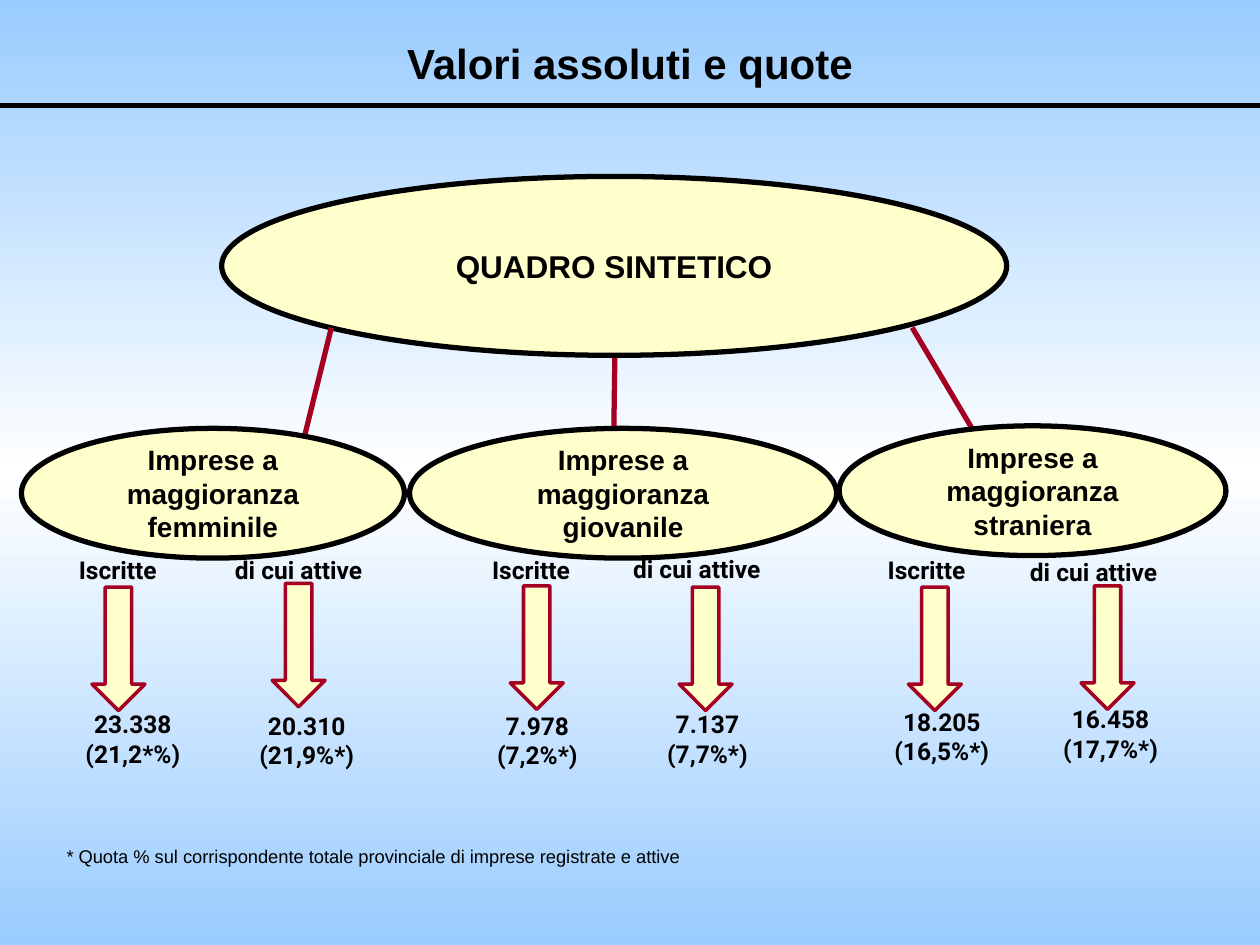
from copy import deepcopy
from pptx import Presentation, util as u
from pptx.dml.color import RGBColor
from pptx.enum import shapes, text
from pptx.oxml import ns
from lxml import etree

SKY = RGBColor(0x99, 0xCC, 0xFF)
WHITE = RGBColor(0xFF, 0xFF, 0xFF)
CREAM = RGBColor(0xFF, 0xFF, 0xCC)
RED = RGBColor(0xA5, 0x00, 0x21)
BLACK = RGBColor(0, 0, 0)
WIDE, HIGH = 10, 7.5

GROUPS = [
    ("femminile", (0.17, 3.4, 3.04, 1.03), [
        ("Iscritte", (0.29, 4.36), (0.73, 4.66), (0.43, 5.58, 1.25), "23.338", "(21,2*%)"),
        ("di cui attive", (1.68, 4.36), (2.16, 4.63), (1.81, 5.59, 1.25), "20.310", "(21,9%*)")]),
    ("giovanile", (3.25, 3.4, 3.39, 1.03), [
        ("Iscritte", (3.57, 4.36), (4.05, 4.65), (3.66, 5.59, 1.21), "7.978", "(7,2%*)"),
        ("di cui attive", (4.84, 4.35), (5.39, 4.66), (5.01, 5.58, 1.21), "7.137", "(7,7%*)")]),
    ("straniera", (6.66, 3.38, 3.07, 1.03), [
        ("Iscritte", (6.71, 4.36), (7.21, 4.66), (6.87, 5.56, 1.21), "18.205", "(16,5%*)"),
        ("di cui attive", (7.99, 4.37), (8.58, 4.65), (8.21, 5.54, 1.21), "16.458", "(17,7%*)")]),
]
LABEL = {"Iscritte": 1.29, "di cui attive": 1.38}


def inch(*vals):
    return [u.Inches(v) for v in vals]


def paint(slide):
    fill = slide.background.fill
    fill.gradient()
    fill.gradient_angle = 270
    stops = slide.element.find(".//" + ns.qn("a:gsLst"))
    stops.append(deepcopy(stops[0]))
    for stop, spot, tint in zip(fill.gradient_stops, (0, 0.5, 1), (SKY, WHITE, SKY)):
        stop.position = spot
        stop.color.rgb = tint


def write(frame, lines, size, face="Arial", bold=True, align=text.PP_ALIGN.CENTER):
    frame.word_wrap = True
    for i, line in enumerate(lines):
        para = frame.paragraphs[0] if i == 0 else frame.add_paragraph()
        para.text = line
        para.alignment = align
        font = para.font
        font.name, font.size, font.bold = face, u.Pt(size), bold
        font.color.rgb = BLACK


def add_text(slide, box, lines, size, **look):
    frame = slide.shapes.add_textbox(*inch(*box)).text_frame
    write(frame, lines, size, **look)
    frame.auto_size = text.MSO_AUTO_SIZE.SHAPE_TO_FIT_TEXT


def add_form(slide, kind, box, edge, width):
    form = slide.shapes.add_shape(kind, *inch(*box))
    form.shadow.inherit = False
    form.fill.solid()
    form.fill.fore_color.rgb = CREAM
    form.line.color.rgb = edge
    form.line.width = u.Pt(width)
    return form


def add_oval(slide, box, label, size):
    frame = add_form(slide, shapes.MSO_SHAPE.OVAL, box, BLACK, 3).text_frame
    frame.vertical_anchor = text.MSO_ANCHOR.MIDDLE
    frame.margin_left = frame.margin_right = u.Inches(0.2)
    write(frame, [label], size)


def add_line(slide, ends, tint, arrow=False):
    line = slide.shapes.add_connector(shapes.MSO_CONNECTOR.STRAIGHT, *inch(*ends))
    line.line.color.rgb = tint
    line.line.width = u.Pt(3)
    if arrow:
        etree.SubElement(line.line._get_or_add_ln(), ns.qn("a:tailEnd"), type="arrow")
    etree.SubElement(line.element.spPr, ns.qn("a:effectLst"))


def add_title(slide, label):
    title = slide.shapes.title
    title.left, title.top, title.width, title.height = inch(0, 0.21, WIDE, 0.58)
    title.text_frame.vertical_anchor = text.MSO_ANCHOR.MIDDLE
    write(title.text_frame, [label], 24)


def add_group(slide, name, oval, parts):
    add_oval(slide, oval, f"Imprese a maggioranza {name}", 16)
    for label, head, arrow, total, count, share in parts:
        add_text(slide, (*head, LABEL[label], 0.34), [label], 14, face="Roboto")
        add_form(slide, shapes.MSO_SHAPE.DOWN_ARROW, (*arrow, 0.42, 0.98), RED, 2)
        add_text(slide, (*total, 0.57), [count, share], 14, face="Roboto")


def main():
    deck = Presentation()
    deck.slide_width, deck.slide_height = inch(WIDE, HIGH)
    slide = deck.slides.add_slide(deck.slide_layouts[5])
    paint(slide)
    add_title(slide, "Valori assoluti e quote")
    add_line(slide, (0, 0.84, WIDE, 0.84), BLACK)
    add_line(slide, (4.88, 2.82, 4.86, 4.25), RED, True)
    add_oval(slide, (1.76, 1.4, 6.23, 1.42), "QUADRO SINTETICO", 18)
    for ends in ((7.24, 2.6, 8.29, 4.37), (2.63, 2.6, 2.19, 4.38)):
        add_line(slide, ends, RED, True)
    for group in GROUPS:
        add_group(slide, *group)
    add_text(slide, (0.43, 6.66, 5.67, 0.28),
             ["* Quota % sul corrispondente totale provinciale di imprese registrate e attive"],
             10.5, bold=False, align=text.PP_ALIGN.LEFT)
    deck.save("out.pptx")


if __name__ == "__main__":
    main()
